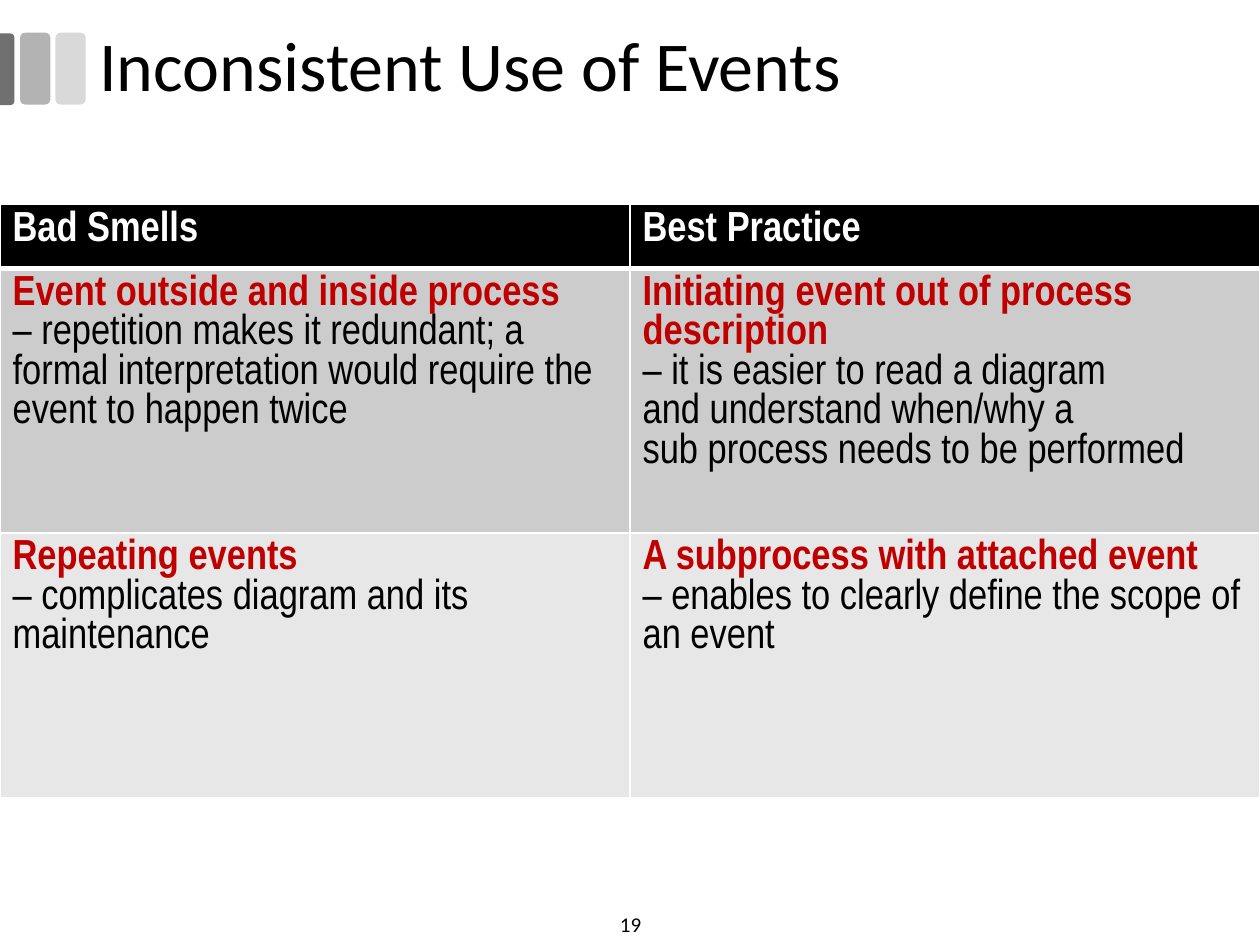
from lxml import etree
from pptx import Presentation, util as u
from pptx.dml.color import RGBColor
from pptx.enum import shapes, text
from pptx.oxml.ns import qn

INK = {"black": "000000", "white": "FFFFFF", "red": "C00000",
       "dark": "707070", "mid": "B3B3B3", "light": "D9D9D9",
       "band": "CCCCCC", "pale": "E7E7E7"}
TITLE = "Inconsistent Use of Events"
PAGE = "19"
HEADS = ["Bad Smells", "Best Practice"]
BODY = [
    [[("Event outside and inside process", "– repetition makes it redundant; a formal "
       "interpretation would require the event to happen twice")],
     [("Initiating event out of process description",),
      "– it is easier to read a diagram",
      "and understand when/why a",
      "sub process needs to be performed"]],
    [[("Repeating events", "– complicates diagram and its maintenance")],
     [("A subprocess with attached event", "– enables to clearly define the scope of"),
      "an event"]],
]
ROWS = [(0.51, "black"), (1.7, "band"), (2.1, "pale")]
BARS = [("light", 0.44), ("mid", 0.16)]


def rgb(name):
    return RGBColor.from_string(INK[name])


def write(par, words, size=24, face="Arial Narrow", ink="black", bold=False):
    run = par.add_run()
    run.text = words
    font = run.font
    font.size, font.name, font.bold = u.Pt(size), face, bold
    font.color.rgb = rgb(ink)


def bar(kind, ink, *box):
    item = deck.shapes.add_shape(kind, *map(u.Inches, box))
    item.shadow.inherit = False
    item.fill.solid()
    item.fill.fore_color.rgb = rgb(ink)
    item.line.fill.background()
    return item


def label(words, box, size, align=None, space=None):
    frame = deck.shapes.add_textbox(*map(u.Inches, box)).text_frame
    frame.word_wrap = True
    frame.vertical_anchor = text.MSO_ANCHOR.MIDDLE
    par = frame.paragraphs[0]
    par.alignment, par.line_spacing = align, space
    write(par, words, size, "Calibri")


def edge(cell, top, bottom):
    props = cell._tc.get_or_add_tcPr()
    sides = [("a:lnL", 1), ("a:lnR", 1), ("a:lnT", top), ("a:lnB", bottom)]
    for spot, (tag, wide) in enumerate(sides):
        line = etree.Element(qn(tag), w=str(u.Pt(wide)))
        fill = etree.SubElement(line, qn("a:solidFill"))
        etree.SubElement(fill, qn("a:srgbClr"), val=INK["white"])
        props.insert(spot, line)


def fill_cell(cell, parts, row):
    cell.fill.solid()
    cell.fill.fore_color.rgb = rgb(ROWS[row][1])
    edge(cell, 3 if row == 1 else 1, 3 if row == 0 else 1)
    frame = cell.text_frame
    for n, part in enumerate(parts):
        par = frame.add_paragraph() if n else frame.paragraphs[0]
        if row == 0:
            write(par, part, ink="white", bold=True)
        elif isinstance(part, str):
            write(par, part)
        else:
            write(par, part[0], ink="red", bold=True)
            for rest in part[1:]:
                par.add_line_break()
                write(par, rest)


show = Presentation()
show.slide_width, show.slide_height = u.Inches(10), u.Inches(7.5)
deck = show.slides.add_slide(show.slide_layouts[6])

for ink, left in BARS:
    bar(shapes.MSO_SHAPE.ROUNDED_RECTANGLE, ink, left, 0.26, 0.24, 0.57)
stub = bar(shapes.MSO_SHAPE.ROUND_2_SAME_RECTANGLE, "dark", -0.23, 0.49, 0.57, 0.12)
stub.rotation = 90
stub.adjustments[0] = 0.29

label(PAGE, (3.88, 7.17, 2.25, 0.33), 12, align=text.PP_ALIGN.CENTER)
label(TITLE, (0.69, 0.17, 9.3, 0.75), 40, space=0.9)

high = sum(tall for tall, _ in ROWS)
grid = deck.shapes.add_table(len(ROWS), len(HEADS), u.Inches(0), u.Inches(1.62),
                             u.Inches(10), u.Inches(high)).table
for r, cells in enumerate([[[head] for head in HEADS]] + BODY):
    grid.rows[r].height = u.Inches(ROWS[r][0])
    for c, parts in enumerate(cells):
        fill_cell(grid.cell(r, c), parts, r)

show.save("out.pptx")
